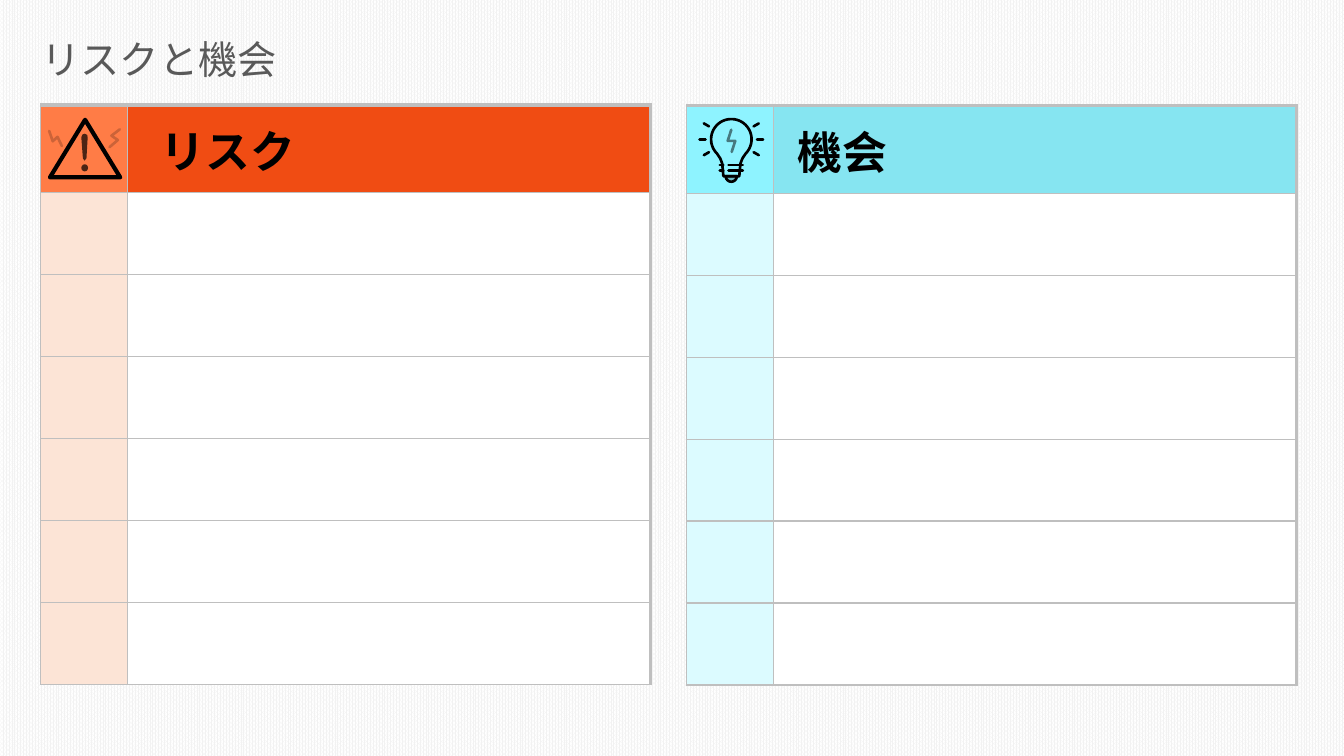
"""Build the slide with a risk table and an opportunity table side by side."""
import math
from dataclasses import dataclass

import lxml.etree
import pptx
import pptx.dml.color
import pptx.enum.dml
import pptx.enum.shapes
import pptx.enum.text
import pptx.oxml.ns
import pptx.util

Cm, Pt = pptx.util.Cm, pptx.util.Pt
RGB = pptx.dml.color.RGBColor.from_string
qn = pptx.oxml.ns.qn
SubElement = lxml.etree.SubElement
SHAPE = pptx.enum.shapes.MSO_SHAPE


@dataclass(frozen=True)
class Theme:
    latin: str = "TeX Gyre Adventor"
    japanese: str = "Noto Sans CJK JP"
    title_size: int = 28
    header_size: int = 32
    spacer_size: int = 12
    title: str = "595959"
    ink: str = "000000"
    grid: str = "BFBFBF"
    paper: str = "FFFFFF"
    weave: str = "F2F2F2"
    risk: tuple = ("FF7C46", "F04C13", "FCE4D6")
    chance: tuple = ("8EF3FF", "86E5F1", "DCFBFF")


theme = Theme()


def paint(sp, fill=0, line=0, width=1.9):
    """Paint a shape in ink, with fill and line opacity in percent."""
    sp.shadow.inherit = False
    for part, opacity in ((sp.fill, fill), (sp.line.fill, line)):
        if not opacity:
            part.background()
            continue
        part.solid()
        part.fore_color.rgb = RGB(theme.ink)
        owner = sp._element.spPr if part is sp.fill else sp.line._ln
        colour = owner.find(qn("a:solidFill")).find(qn("a:srgbClr"))
        SubElement(colour, qn("a:alpha"), val=str(opacity * 1000))
    if line:
        sp.line.width = Pt(width)
        sp.line._ln.set("cap", "rnd")
        SubElement(sp.line._ln, qn("a:round"))


def outline(shapes, points, close=False):
    """Draw straight segments through points given in centimetres."""
    corners = [(Cm(x), Cm(y)) for x, y in points]
    fb = shapes.build_freeform(*corners[0])
    fb.add_line_segments(corners[1:], close=close)
    return fb.convert_to_shape()


prs = pptx.Presentation()
prs.slide_width, prs.slide_height = Cm(33.87), Cm(19.05)
s = prs.slides.add_slide(prs.slide_layouts[6])
bg = s.background.fill
bg.patterned()
bg.pattern = pptx.enum.dml.MSO_PATTERN.PERCENT_80
bg.fore_color.rgb, bg.back_color.rgb = RGB(theme.weave), RGB(theme.paper)

tf = s.shapes.add_textbox(Cm(0.8), Cm(0.76), Cm(22), Cm(1.45)).text_frame
tf.word_wrap = True
tf.auto_size = pptx.enum.text.MSO_AUTO_SIZE.SHAPE_TO_FIT_TEXT
p = tf.paragraphs[0]
p.text = "リスクと機会"
p.font.name, p.font.size = theme.latin, Pt(theme.title_size)
p.font.color.rgb = RGB(theme.title)

spacer = (" ", theme.japanese, theme.spacer_size, False)
wide_spacer = (" ", theme.latin, theme.header_size, True)
tables = (
    (1.02, 2.64, theme.risk, wide_spacer, "リスク"),
    (17.3, 2.66, theme.chance, spacer, "機会"),
)
for left, top, (icon_fill, header_fill, side_fill), lead, heading in tables:
    tbl = s.shapes.add_table(7, 2, Cm(left), Cm(top), Cm(15.38), Cm(14.6)).table
    tbl.first_row = tbl.horz_banding = False
    tbl.columns[0].width, tbl.columns[1].width = Cm(2.19), Cm(13.19)
    for row, line in enumerate(tbl.rows):
        line.height = Cm(2.065 if row else 2.21)
        fills = (side_fill, theme.paper) if row else (icon_fill, header_fill)
        for col, cell in enumerate(line.cells):
            widths = {"L": 1, "R": 2.25 if col else 1, "T": 1 if row else 3, "B": 1}
            for side, width in widths.items():
                ln = SubElement(cell._tc.get_or_add_tcPr(), qn("a:ln" + side), w=str(Pt(width)))
                SubElement(SubElement(ln, qn("a:solidFill")), qn("a:srgbClr"), val=theme.grid)
            cell.fill.solid()
            cell.fill.fore_color.rgb = RGB(fills[col])

    cell = tbl.cell(0, 1)
    cell.vertical_anchor = pptx.enum.text.MSO_ANCHOR.MIDDLE
    cell.margin_left = cell.margin_right = cell.margin_top = Cm(0.02)
    cell.margin_bottom = 0
    p = cell.text_frame.paragraphs[0]
    p._p.get_or_add_pPr().set("marL", str(Cm(0.5)))
    for text, face, size, bold in (lead, (heading, theme.japanese, theme.header_size, True)):
        r = p.add_run()
        r.text = text
        r.font.name, r.font.size, r.font.bold = face, Pt(size), bold
        r.font.color.rgb = RGB(theme.ink)
        SubElement(r._r.get_or_add_rPr(), qn("a:ea"), typeface=face)

warning = s.shapes.add_group_shape().shapes
for bolt in (
    [(1.24, 3.3), (1.33, 3.56), (1.45, 3.45), (1.56, 3.68)],
    [(3.02, 3.26), (2.81, 3.42), (2.97, 3.53), (2.76, 3.71)],
):
    paint(outline(warning, bolt), line=20)
triangle = warning.add_shape(SHAPE.ISOSCELES_TRIANGLE, Cm(1.26), Cm(3.02), Cm(1.77), Cm(1.45))
paint(triangle, line=100, width=3)
mark = [(2.05, 3.46), (2.08, 3.39), (2.14, 3.37), (2.2, 3.4),
        (2.21, 3.47), (2.18, 3.99), (2.13, 4.05), (2.09, 3.99)]
paint(outline(warning, mark, close=True), fill=70)
paint(warning.add_shape(SHAPE.OVAL, Cm(2.05), Cm(4.14), Cm(0.17), Cm(0.18)), fill=70)

bulb = s.shapes.add_group_shape().shapes
cx, cy = 18.43, 3.51
cap = [(cx + 0.14 * math.cos(math.radians(a)), cy + 0.93 + 0.14 * math.sin(math.radians(a)))
       for a in range(0, 181, 15)]
paint(outline(bulb, cap, close=True), fill=24, line=100)
glass = [(cx + 0.51 * math.cos(math.radians(a)), cy + 0.51 * math.sin(math.radians(a)))
         for a in range(135, 406, 6)]
neck = [(0.28, 0.48), (0.23, 0.61), (0.2, 0.93), (-0.2, 0.93), (-0.23, 0.61), (-0.28, 0.48)]
paint(outline(bulb, glass + [(cx + x, cy + y) for x, y in neck], close=True), line=100)
bolt = [(0, -0.24), (-0.09, 0.04), (0.1, 0.04), (0.01, 0.32)]
paint(outline(bulb, [(cx + x, cy + y) for x, y in bolt]), line=50)

strokes = [(x1, y, x2, y) for y in (0.65, 0.79) for x1, x2 in ((-0.29, -0.2), (-0.07, 0.29))]
for angle in (-30, 0, 30, 150, 180, 210):
    dx, dy = math.cos(math.radians(angle)), math.sin(math.radians(angle))
    strokes.append((0.65 * dx, 0.65 * dy, 0.8 * dx, 0.8 * dy))
for x1, y1, x2, y2 in strokes:
    c = bulb.add_connector(pptx.enum.shapes.MSO_CONNECTOR.STRAIGHT,
                           Cm(cx + x1), Cm(cy + y1), Cm(cx + x2), Cm(cy + y2))
    c.line.color.rgb, c.line.width = RGB(theme.ink), Pt(1.9)
    c.line._ln.set("cap", "rnd")
    SubElement(c._element.spPr, qn("a:effectLst"))

prs.save("out.pptx")
